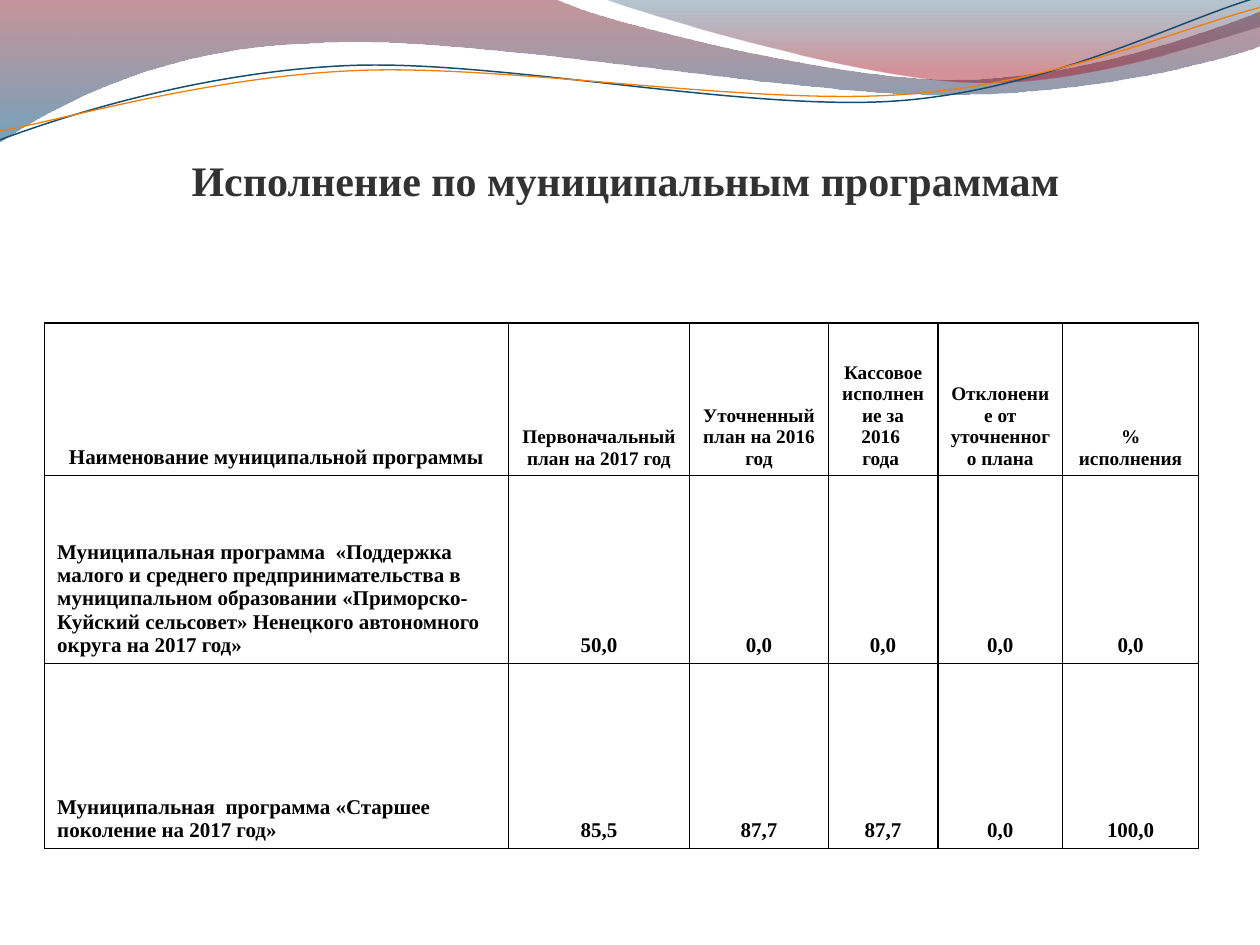
from dataclasses import dataclass
from math import cos, radians, sin

from lxml import etree
from pptx import Presentation
from pptx.dml.color import RGBColor
from pptx.enum.text import MSO_ANCHOR, PP_ALIGN
from pptx.oxml.ns import qn
from pptx.util import Inches, Pt

BOTTOM = MSO_ANCHOR.BOTTOM
LEFT, CENTER = PP_ALIGN.LEFT, PP_ALIGN.CENTER
FONT = "Times New Roman"
BLACK = RGBColor(0x00, 0x00, 0x00)
GRAY = RGBColor(0x32, 0x32, 0x32)
WINE = RGBColor(0x7E, 0x16, 0x21)
BLUE = RGBColor(0x00, 0x56, 0x89)
TEAL = RGBColor(0x09, 0x44, 0x67)
RED = RGBColor(0xA1, 0x0F, 0x1F)
NAVY = RGBColor(0x18, 0x4E, 0x6D)
ORANGE = RGBColor(0xF0, 0x7F, 0x09)
WAVE_TILT = 2.7

Point = tuple[float, float]
Segment = list[Point]


@dataclass
class Stop:
    position: float
    color: RGBColor
    opacity: int


@dataclass
class Band:
    start: Point
    segments: list[Segment]
    stops: list[Stop]


@dataclass
class Wave:
    start: Point
    segments: list[Segment]
    center: Point
    color: RGBColor
    width: float


BANDS = [
    Band((0, 0), [
        [(4.4, -0.01)],
        [(4.76, 0.17), (6.64, 0.63), (7.58, 0.63)],
        [(8.53, 0.63), (9.58, 0.26), (10, 0.09)],
        [(10.01, 0.36)],
        [(9.83, 0.44), (8.7, 0.76), (7.46, 0.75)],
        [(6.22, 0.75), (3.82, 0.28), (2.57, 0.34)],
        [(1.29, 0.36), (0.46, 0.83), (-0.01, 1.13)],
    ], [Stop(0, WINE, 45), Stop(1, BLUE, 55)]),
    Band((4.79, -0.01), [
        [(5.09, 0.11), (6.82, 0.62), (7.69, 0.65)],
        [(8.56, 0.69), (9.61, 0.32), (10, 0.21)],
        [(10, 0)],
    ], [Stop(0, TEAL, 30), Stop(0.8, RED, 45)]),
]
WAVES = [
    Wave((0, 1.11), [
        [(0.48, 0.93), (1.58, 0.57), (2.77, 0.52)],
        [(3.95, 0.47), (5.93, 0.89), (7.13, 0.8)],
        [(8.33, 0.71), (9.38, 0.15), (9.98, -0.02)],
    ], (4.99, 0.58), NAVY, 0.85),
    Wave((0, 1.04), [
        [(0.47, 0.96), (1.64, 0.61), (2.83, 0.56)],
        [(4.03, 0.51), (5.97, 0.84), (7.17, 0.75)],
        [(8.36, 0.67), (9.41, 0.21), (10, 0.06)],
    ], (5, 0.59), ORANGE, 0.75),
]

COLUMNS = [3.68, 1.44, 1.1, 0.87, 0.99, 1.08]
ROWS = [1.21, 1.49, 1.47]
CELLS = [
    ["Наименование муниципальной программы", "Первоначальный план на 2017 год",
     "Уточненный план на 2016 год", "Кассовое исполнение за 2016  года ",
     "Отклонение от уточненного плана", "% исполнения"],
    ["Муниципальная программа  «Поддержка малого и среднего предпринимательства в "
     "муниципальном образовании «Приморско-Куйский сельсовет» Ненецкого автономного "
     "округа на 2017 год»", "50,0", "0,0", "0,0", "0,0", "0,0"],
    ["Муниципальная  программа «Старшее поколение на 2017 год»",
     "85,5", "87,7", "87,7", "0,0", "100,0"],
]


def turn(point: Point, center: Point, degrees: float) -> Point:
    a = radians(degrees)
    dx, dy = point[0] - center[0], point[1] - center[1]
    return (center[0] + dx * cos(a) - dy * sin(a),
            center[1] + dx * sin(a) + dy * cos(a))


def add_outline(s, start: Point, segments: list[Segment], closed: bool):
    points = [(Inches(x), Inches(y)) for seg in segments for x, y in seg]
    builder = s.shapes.build_freeform(Inches(start[0]), Inches(start[1]))
    builder.add_line_segments(points, close=closed)
    sp = builder.convert_to_shape()
    sp.shadow.inherit = False
    lines = iter(list(sp._element.spPr.iter(qn("a:lnTo"))))
    for seg in segments:
        group = [next(lines) for _ in seg]
        if len(group) == 3:
            curve = etree.Element(qn("a:cubicBezTo"))
            group[0].addprevious(curve)
            for line in group:
                curve.append(line[0])
                line.getparent().remove(line)
    return sp


def add_band(s, band: Band) -> None:
    sp = add_outline(s, band.start, band.segments, True)
    sp.line.fill.background()
    sp.fill.gradient()
    sp.fill.gradient_angle = 270
    for gs, stop in zip(sp.fill.gradient_stops, band.stops):
        gs.position = stop.position
        gs.color.rgb = stop.color
    for clr, stop in zip(sp._element.spPr.iter(qn("a:srgbClr")), band.stops):
        etree.SubElement(clr, qn("a:alpha"), val=str(stop.opacity * 1000))


def add_wave(s, wave: Wave) -> None:
    start = turn(wave.start, wave.center, WAVE_TILT)
    segments = [[turn(p, wave.center, WAVE_TILT) for p in seg] for seg in wave.segments]
    sp = add_outline(s, start, segments, False)
    sp.rotation = 360 - WAVE_TILT
    sp.fill.background()
    sp.line.color.rgb = wave.color
    sp.line.width = Pt(wave.width)


def write_text(tf, text: str, *, size: float, color: RGBColor = BLACK,
               align: PP_ALIGN = CENTER) -> None:
    p = tf.paragraphs[0]
    p.alignment = align
    r = p.add_run()
    r.text = text
    r.font.name = FONT
    r.font.size = Pt(size)
    r.font.bold = True
    r.font.color.rgb = color


def add_borders(cell) -> None:
    tc_pr = cell._tc.get_or_add_tcPr()
    for i, side in enumerate(("lnL", "lnR", "lnT", "lnB")):
        ln = etree.Element(qn(f"a:{side}"), w=str(Pt(1)))
        fill = etree.SubElement(ln, qn("a:solidFill"))
        etree.SubElement(fill, qn("a:srgbClr"), val=str(BLACK))
        tc_pr.insert(i, ln)


def add_title(s, text: str) -> None:
    title = s.shapes.title
    title.left, title.top = Inches(0.43), Pt(55.8)
    title.width, title.height = Inches(9.07), Inches(0.85)
    tf = title.text_frame
    tf.vertical_anchor = BOTTOM
    tf.margin_left = tf.margin_right = tf.margin_bottom = 0
    tf.margin_top = Inches(0.05)
    write_text(tf, text, size=24, color=GRAY)


def add_programs(s) -> None:
    table = s.shapes.add_table(
        len(ROWS), len(COLUMNS), Pt(25.5), Pt(184.7),
        Inches(sum(COLUMNS)), Inches(sum(ROWS))).table
    table.first_row = table.horz_banding = False
    for column, width in zip(table.columns, COLUMNS):
        column.width = Inches(width)
    for row, height in zip(table.rows, ROWS):
        row.height = Inches(height)
    for i, texts in enumerate(CELLS):
        for j, text in enumerate(texts):
            cell = table.cell(i, j)
            cell.fill.background()
            cell.vertical_anchor = BOTTOM
            add_borders(cell)
            write_text(cell.text_frame, text, size=11 if i == 0 and j else 12,
                       align=LEFT if i and j == 0 else CENTER)


def main() -> None:
    prs = Presentation()
    prs.slide_width, prs.slide_height = Inches(10), Inches(7.5)
    s = prs.slides.add_slide(prs.slide_layouts[5])
    for band in BANDS:
        add_band(s, band)
    for wave in WAVES:
        add_wave(s, wave)
    add_title(s, "Исполнение по муниципальным программам")
    add_programs(s)
    prs.save("out.pptx")


if __name__ == "__main__":
    main()
